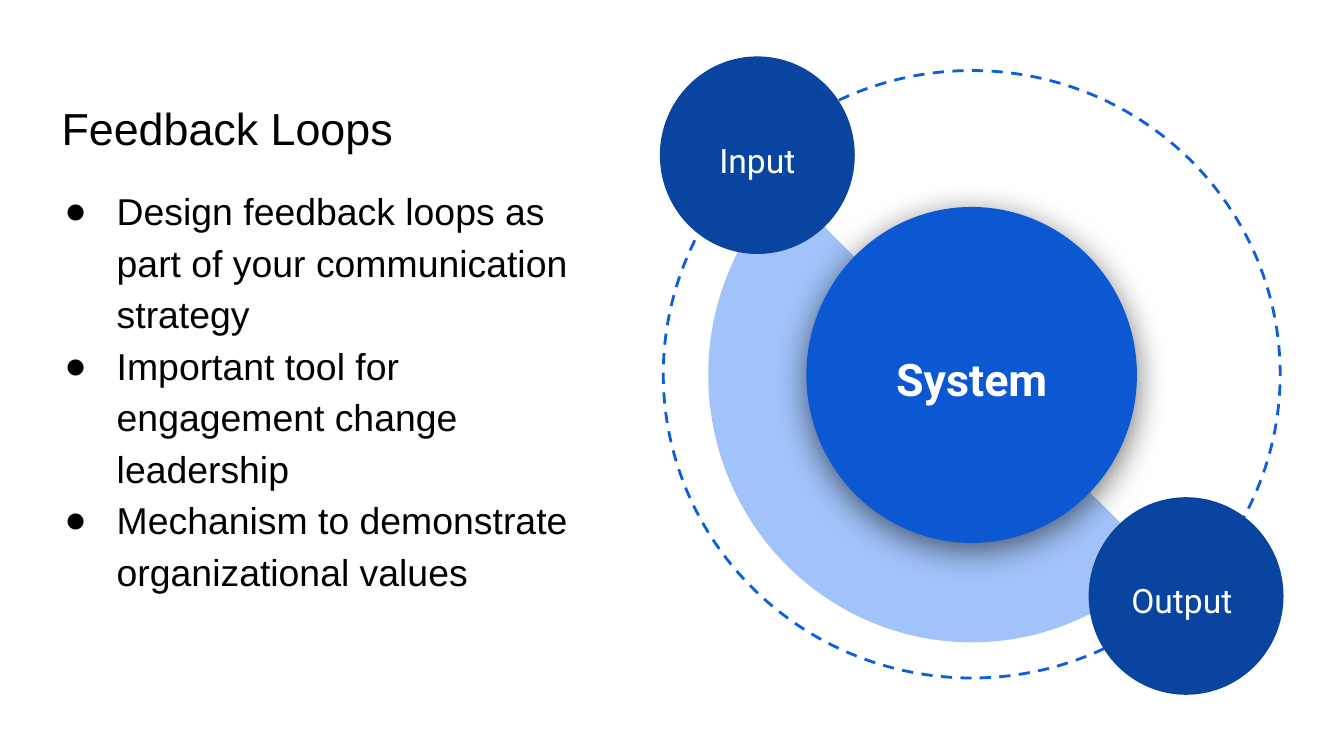
from pptx import Presentation
from pptx.dml.color import RGBColor
from pptx.enum.dml import MSO_LINE
from pptx.enum.shapes import MSO_SHAPE
from pptx.enum.text import MSO_ANCHOR, PP_ALIGN
from pptx.oxml import parse_xml
from pptx.oxml.ns import nsdecls, qn
from pptx.util import Inches, Pt

BLACK = RGBColor(0x00, 0x00, 0x00)
WHITE = RGBColor(0xFF, 0xFF, 0xFF)
ORBIT_BLUE = RGBColor(0x0D, 0x5D, 0xDF)
ARC_BLUE = RGBColor(0xA1, 0xC3, 0xFA)
SYSTEM_BLUE = RGBColor(0x0C, 0x58, 0xD3)
NODE_BLUE = RGBColor(0x09, 0x44, 0xA1)

OVAL, PIE = MSO_SHAPE.OVAL, MSO_SHAPE.PIE
DASH = MSO_LINE.DASH
TOP, MIDDLE, BOTTOM = MSO_ANCHOR.TOP, MSO_ANCHOR.MIDDLE, MSO_ANCHOR.BOTTOM
LEFT, CENTER = PP_ALIGN.LEFT, PP_ALIGN.CENTER

BULLET_POINTS = [
    "Design feedback loops as part of your communication strategy",
    "Important tool for engagement change leadership",
    "Mechanism to demonstrate organizational values",
]


def add_bullet(paragraph):
    properties = paragraph._p.get_or_add_pPr()
    properties.set("marL", str(Inches(0.5)))
    properties.set("indent", str(Inches(-0.39)))
    for element in (
        f'<a:buClr {nsdecls("a")}><a:srgbClr val="{BLACK}"/></a:buClr>',
        f'<a:buFont {nsdecls("a")} typeface="Arial"/>',
        f'<a:buChar {nsdecls("a")} char="●"/>',
    ):
        properties.append(parse_xml(element))


def add_text(shapes, box, lines, size, font="Arial", color=BLACK, bold=False,
             align=LEFT, anchor=TOP, spacing=1.0, bullets=False):
    frame = shapes.add_textbox(*map(Inches, box)).text_frame
    frame.word_wrap = True
    frame.vertical_anchor = anchor
    frame.margin_left = frame.margin_right = Inches(0.1)
    frame.margin_top = frame.margin_bottom = Inches(0.1)
    for index, line in enumerate(lines):
        paragraph = frame.add_paragraph() if index else frame.paragraphs[0]
        paragraph.alignment = align
        paragraph.line_spacing = spacing
        if bullets:
            add_bullet(paragraph)
        run = paragraph.add_run()
        run.text = line
        run.font.name = font
        run.font.size = Pt(size)
        run.font.bold = bold
        run.font.color.rgb = color


def add_filled(shapes, kind, box, color):
    shape = shapes.add_shape(kind, *map(Inches, box))
    shape.shadow.inherit = False
    shape.fill.solid()
    shape.fill.fore_color.rgb = color
    shape.line.fill.background()
    return shape


def add_orbit(shapes):
    orbit = shapes.add_shape(OVAL, *map(Inches, (4.97, 0.49, 4.52, 4.59)))
    orbit.shadow.inherit = False
    orbit.rotation = 270
    orbit.fill.background()
    orbit.line.color.rgb = ORBIT_BLUE
    orbit.line.width = Pt(1.5)
    orbit.line.dash_style = DASH


def add_arc(shapes, start, end):
    """Add the pale sector, running clockwise between two angles in degrees."""
    arc = add_filled(shapes, PIE, (5.27, 0.8, 3.92, 3.98), ARC_BLUE)
    for index, angle in enumerate((start, end)):
        arc.adjustments[index] = angle * 0.6  # 60000 units per degree / 100000


def add_drop_shadow(shape):
    effects = shape._element.spPr.find(qn("a:effectLst"))
    effects.append(parse_xml(
        f'<a:outerShdw {nsdecls("a")} blurRad="{Pt(18)}" dist="{Pt(4)}" '
        'dir="5400000" algn="bl" rotWithShape="0"><a:srgbClr val="000000">'
        '<a:alpha val="55000"/></a:srgbClr></a:outerShdw>'))


def add_label(shapes, box, text, size, bold=False):
    add_text(shapes, box, [text], size, font="Roboto", color=WHITE, bold=bold,
             align=CENTER, anchor=MIDDLE, spacing=1.15)


def add_node(shapes, left, top, text):
    add_filled(shapes, OVAL, (left, top, 1.45, 1.47), NODE_BLUE)
    add_label(shapes, (left + 0.21, top + 0.24, 1.03, 1.01), text, 18)


def add_system_diagram(slide):
    shapes = slide.shapes.add_group_shape().shapes
    add_orbit(shapes)
    add_arc(shapes, 44.83, 225.18)
    system = add_filled(shapes, OVAL, (6, 1.54, 2.46, 2.5), SYSTEM_BLUE)
    add_drop_shadow(system)
    add_label(shapes, (6.32, 2.22, 1.82, 1.14), "System", 24, bold=True)
    add_node(shapes, 4.91, 0.42, "Input")
    add_node(shapes, 8.1, 3.7, "Output ")


def main():
    presentation = Presentation()
    presentation.slide_width = Inches(10)
    presentation.slide_height = Inches(10 * 9 / 16)
    slide = presentation.slides.add_slide(presentation.slide_layouts[6])
    add_text(slide.shapes, (0.36, 0.42, 3.07, 0.83), ["Feedback Loops"], 24,
             anchor=BOTTOM)
    add_text(slide.shapes, (0.27, 1.25, 4.11, 4.02), BULLET_POINTS, 20,
             spacing=1.15, bullets=True)
    add_system_diagram(slide)
    presentation.save("out.pptx")


if __name__ == "__main__":
    main()
